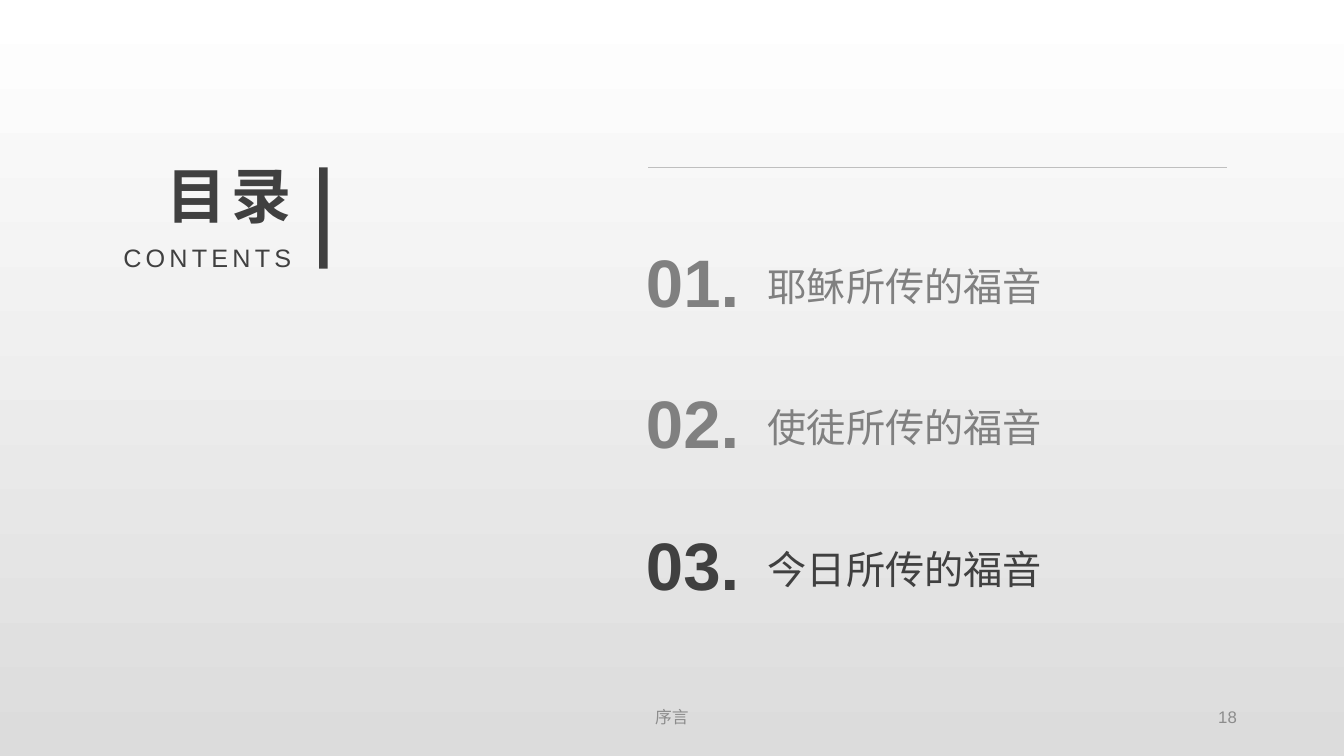
import pptx
import pptx.util
import pptx.dml.color
import pptx.enum.shapes
import pptx.enum.text
import pptx.oxml.ns
import lxml.etree

Pt = pptx.util.Pt
RGBColor = pptx.dml.color.RGBColor
ALIGN = pptx.enum.text.PP_ALIGN
ANCHOR = pptx.enum.text.MSO_ANCHOR

# Content
TITLE, SUBTITLE = "目录", "CONTENTS"
CHAPTERS = ["耶稣所传的福音", "使徒所传的福音", "今日所传的福音"]
CURRENT = 3
FOOTER, PAGE = "序言", "18"

# Colours
DARK = RGBColor(0x40, 0x40, 0x40)
MUTED = RGBColor(0x80, 0x80, 0x80)
RULE = RGBColor(0xBF, 0xBF, 0xBF)
FOOT = RGBColor(0x8C, 0x8C, 0x8C)
BG_TOP = RGBColor(0xFF, 0xFF, 0xFF)
BG_BOTTOM = RGBColor(0xDC, 0xDC, 0xDC)

# Layout in points
HEAD_X, HEAD_W = 69.8, 145.4
HEAD_Y, HEAD_H = 109.4, 60.5
RULE_X, RULE_W, RULE_Y = 463, 413.3, 119.5
NUMBER_X, NUMBER_W = 454.3, 81.4
NAME_X, NAME_W = 541.4, 334.1
ROW_Y, ROW_H, ROW_PITCH = 167.8, 65.5, 101.2
FOOT_Y, FOOT_H = 499.7, 25.2


def write(sp, box, text, size, color, align=ALIGN.LEFT, anchor=ANCHOR.TOP,
          bold=False, spacing=0, wrap=True):
    sp.left, sp.top, sp.width, sp.height = map(Pt, box)
    tf = sp.text_frame
    tf.auto_size = pptx.enum.text.MSO_AUTO_SIZE.NONE
    tf.word_wrap = wrap
    tf.vertical_anchor = anchor
    p = tf.paragraphs[0]
    p.alignment = align
    p.font.name, p.font.size, p.font.bold = "Arial", Pt(size), bold
    p.font.color.rgb = color
    r = p.add_run()
    r.text = text
    if spacing:
        r._r.get_or_add_rPr().set("spc", str(spacing * 100))
    return p


def add_text(slide, box, *args, **kwargs):
    return write(slide.shapes.add_textbox(0, 0, 0, 0), box, *args, **kwargs)


def main():
    prs = pptx.Presentation()
    prs.slide_width, prs.slide_height = Pt(960), Pt(540)
    slide = prs.slides.add_slide(prs.slide_layouts[5])

    # Background
    fill = slide.background.fill
    fill.gradient()
    fill.gradient_angle = 270
    for stop, position, color in zip(fill.gradient_stops, (0, 1), (BG_TOP, BG_BOTTOM)):
        stop.position = position
        stop.color.rgb = color

    # Heading with its vertical bar
    write(slide.shapes.title, (HEAD_X, HEAD_Y, HEAD_W, HEAD_H), TITLE, 42.9, DARK,
          ALIGN.RIGHT, bold=True, spacing=3)
    add_text(slide, (HEAD_X, HEAD_Y + HEAD_H, HEAD_W, 28.8), SUBTITLE, 18, DARK,
             ALIGN.RIGHT, spacing=3)
    bar = slide.shapes.add_shape(pptx.enum.shapes.MSO_SHAPE.RECTANGLE,
                                 Pt(228), Pt(RULE_Y), Pt(6), Pt(72.5))
    bar.shadow.inherit = False
    bar.fill.solid()
    bar.fill.fore_color.rgb = DARK
    bar.line.fill.background()

    # Chapter list
    for i, name in enumerate(CHAPTERS):
        y = ROW_Y + i * ROW_PITCH
        color = DARK if i + 1 == CURRENT else MUTED
        add_text(slide, (NUMBER_X, y, NUMBER_W, ROW_H), f"{i + 1:02}.", 48, color,
                 bold=True, wrap=False)
        p = add_text(slide, (NAME_X, y, NAME_W, ROW_H), name, 28, color,
                     anchor=ANCHOR.MIDDLE)
        p.line_spacing = 1.2

    # Rule above the list
    rule = slide.shapes.add_connector(pptx.enum.shapes.MSO_CONNECTOR.STRAIGHT, Pt(RULE_X),
                                      Pt(RULE_Y), Pt(RULE_X + RULE_W), Pt(RULE_Y))
    rule.line.color.rgb = RULE
    rule.line.width = Pt(0.5)
    lxml.etree.SubElement(rule._element.spPr, pptx.oxml.ns.qn("a:effectLst"))

    # Footer and page number
    add_text(slide, (324, FOOT_Y, 312, FOOT_H), FOOTER, 12, FOOT,
             ALIGN.CENTER, ANCHOR.MIDDLE)
    add_text(slide, (678.2, FOOT_Y, 212.4, FOOT_H), PAGE, 12, FOOT,
             ALIGN.RIGHT, ANCHOR.MIDDLE)

    prs.save("out.pptx")


if __name__ == "__main__":
    main()
